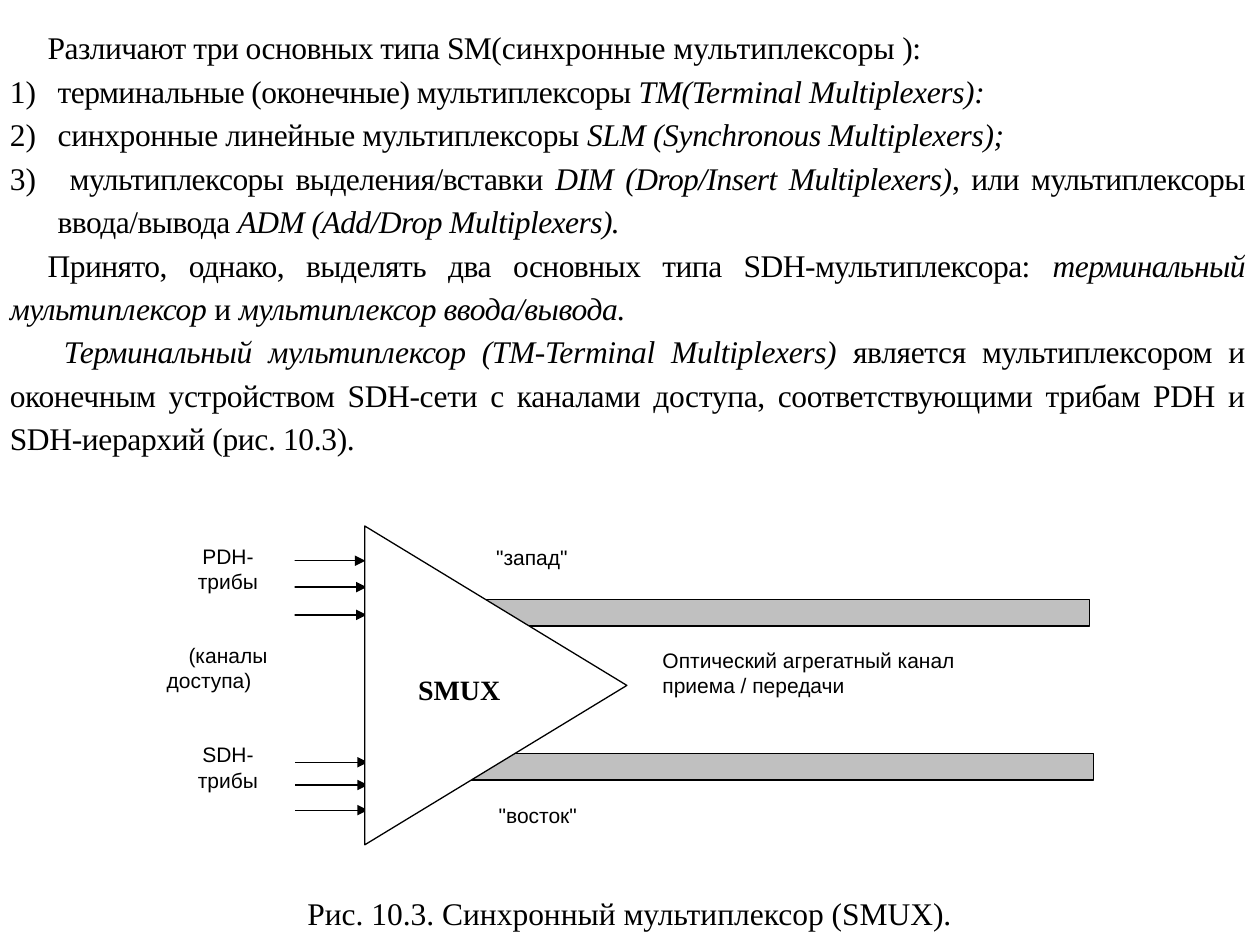
from lxml.etree import SubElement
from pptx import Presentation
from pptx.dml.color import RGBColor
from pptx.enum.shapes import MSO_CONNECTOR, MSO_SHAPE
from pptx.enum.text import MSO_ANCHOR, PP_ALIGN
from pptx.oxml.ns import qn
from pptx.util import Emu, Inches, Pt

WIDE, HIGH = 10, 7.5
HUES = {"ink": "000000", "paper": "FFFFFF", "bar": "C0C0C0"}
ROMAN = {"name": "Times New Roman", "size": Pt(18)}
SANS = {"name": "Arial", "size": Pt(12)}
TITLE = {"name": "Times New Roman", "size": Pt(16), "bold": True}
PLAIN = {"margin": 0, "indent": 0.3}
LIST = {"margin": 0.38, "indent": -0.38, "number": True}
JUST, MID, LEFT = PP_ALIGN.JUSTIFY, PP_ALIGN.CENTER, PP_ALIGN.LEFT

BODY = [
    (PLAIN, [("Различают три основных типа SM(", -30, False),
             ("синхронные мультиплексоры", 0, False), (" ):", -30, False)]),
    (LIST, [("терминальные (оконечные) мультиплексоры ", -30, False),
            ("ТМ(Terminal Multiplexers):", -20, True)]),
    (LIST, [("синхронные линейные мультиплексоры ", -20, False),
            ("SLM (Synchronous Multiplexers);", -20, True)]),
    (LIST, [(" мультиплексоры выделения/вставки ", -30, False),
            ("DIM (Drop/Insert Multiplexers)", -30, True),
            (", или мультиплексоры ввода/вывода ", -30, False),
            ("ADM (Add/Drop Multiplexers).", -30, True)]),
    (PLAIN, [("Принято, однако, выделять два основных типа SDH-мультиплексора: ", -30, False),
             ("терминальный мульти", -30, True), ("плексор ", -20, True),
             ("и ", -20, False), ("мультиплексор ввода/вывода.", -20, True)]),
    (PLAIN, [(" Терминальный мультиплексор (ТМ-Terminal Multiplexers)", -20, True),
             (" является мультиплексором и оконечным устройством SDH-сети с каналами доступа, "
              "соответствующими трибам PDH и SDH-иерархий (рис. 10.3).", -20, False)]),
]
SIDE = [("PDH-", 0), ("трибы", 0), ("(каналы доступа)", 28), ("SDH-", 28), ("трибы", 0)]
NOTE = ["Оптический агрегатный канал", "приема / передачи"]
ROWS = [(2.32, 4.45), (2.33, 4.66), (2.33, 4.88), (2.34, 6.05), (2.34, 6.23), (2.34, 6.43)]
REACH = 0.58
BARS = [(3.61, 4.76), (3.64, 5.98)]

deck = Presentation()
deck.slide_width, deck.slide_height = Inches(WIDE), Inches(HIGH)
slide = deck.slides.add_slide(deck.slide_layouts[6])
shapes = slide.shapes


def hue(name):
    return RGBColor.from_string(HUES[name])


def style(item, values):
    for key, value in values.items():
        setattr(item, key, value)


def block(spot, fill, edge=False, kind=MSO_SHAPE.RECTANGLE):
    shape = shapes.add_shape(kind, *map(Inches, spot))
    shape.shadow.inherit = False
    shape.fill.solid()
    shape.fill.fore_color.rgb = hue(fill)
    if edge:
        shape.line.color.rgb = hue("ink")
        shape.line.width = Pt(0.75)
    else:
        shape.line.fill.background()
    return shape


def write(shape, paras, font, align, top=0.05, lead=1):
    frame = shape.text_frame
    style(frame, {"word_wrap": True, "vertical_anchor": MSO_ANCHOR.TOP,
                  "margin_top": Inches(top)})
    for place, (form, runs) in enumerate(paras):
        para = frame.add_paragraph() if place else frame.paragraphs[0]
        style(para, {"alignment": align, "line_spacing": lead,
                     "space_before": Pt(form.get("before", 0))})
        props = para._p.get_or_add_pPr()
        props.set("marL", str(Inches(form["margin"])))
        props.set("indent", str(Inches(form["indent"])))
        if form.get("number"):
            SubElement(props, qn("a:buAutoNum"), type="arabicParenR")
        for text, space, slant in runs:
            run = para.add_run()
            run.text = text
            style(run.font, {**font, "italic": slant})
            run.font.color.rgb = hue("ink")
            run._r.get_or_add_rPr().set("spc", str(space))


def label(spot, text, font, indent=0.3, margin=0, **form):
    box = shapes.add_textbox(*map(Inches, spot))
    paras = [({"margin": margin, "indent": indent}, [(text, 0, False)])]
    write(box, paras, font, JUST, **form)


def arrow(left, top):
    line = shapes.add_connector(MSO_CONNECTOR.STRAIGHT,
                                *map(Inches, (left, top, left + REACH, top)))
    line.line.color.rgb = hue("ink")
    line.line.width = Pt(0.75)
    props = line._element.spPr
    SubElement(props.find(qn("a:ln")), qn("a:tailEnd"), type="triangle")
    SubElement(props, qn("a:effectLst"))


body = shapes.add_textbox(*map(Inches, (-0.02, 0.13, WIDE, 3.58)))
write(body, BODY, ROMAN, JUST, lead=1.15)

for row in ROWS:
    arrow(*row)

side = [({**PLAIN, "before": gap}, [(text, 0, False)]) for text, gap in SIDE]
write(block((0.98, 4.06, 1.36, 2.68), "paper"), side, SANS, MID, top=0.25)

for left, top in BARS:
    block((left, top, 5.04, 0.21), "bar", True)

note = [(PLAIN, [(text, 0, False)]) for text in NOTE]
write(block((4.86, 5.09, 4.07, 0.82), "paper"), note, SANS, LEFT)

mux = block((2.67, 4.4, 2.53, 2.08), "paper", True, MSO_SHAPE.ISOSCELES_TRIANGLE)
mux.rotation = 90

label((2.92, 5.09, 1.16, 0.82), "SMUX", TITLE, top=0.25)
label((3.31, 4.27, 2.13, 0.62), "\"запад\"", SANS, indent=0.53)
label((3.51, 6.12, 2.13, 0.62), "\"восток\"", SANS, indent=0.35, top=0.25)
label((1.54, 7, 7.62, 0.45), "Рис. 10.3. Синхронный мультиплексор (SMUX).", ROMAN,
      margin=0.5, lead=1.15)

deck.save("out.pptx")
